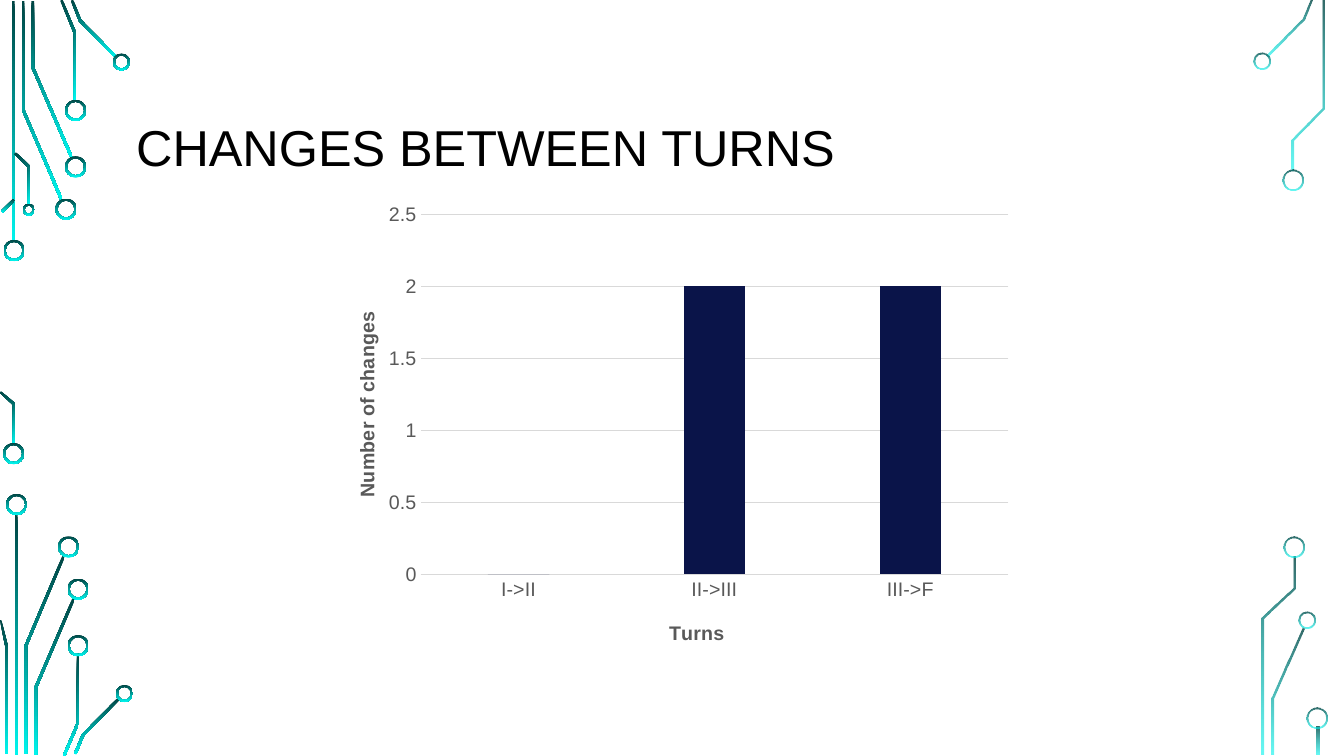
from math import hypot

from lxml import etree
from pptx import Presentation
from pptx.chart.data import CategoryChartData
from pptx.dml.color import RGBColor
from pptx.enum.chart import XL_CHART_TYPE, XL_TICK_MARK
from pptx.enum.shapes import MSO_SHAPE
from pptx.enum.text import MSO_ANCHOR, PP_ALIGN
from pptx.oxml.ns import qn
from pptx.util import Inches, Pt

COLUMN = XL_CHART_TYPE.COLUMN_CLUSTERED
NO_TICK = XL_TICK_MARK.NONE
RECT, DONUT = MSO_SHAPE.RECTANGLE, MSO_SHAPE.DONUT
MIDDLE, LEFT = MSO_ANCHOR.MIDDLE, PP_ALIGN.LEFT

COLS, ROWS = 1333, 750
CELL = Inches(0.01)
TRACE, RIM = 2.6, 2
BIG, MID, TINY = 21, 17, 12
DARK, CYAN = "004543", "00F5EE"
GREY, PALE, NAVY = "595959", "D9D9D9", "0A1449"

LEFT_SIDE = {
    "stems": [(12, 1, 239), (15, 510, 239)],
    "traces": [
        [(61, 198), (23, 109), (23, 1)],
        [(71, 156), (32.5, 67), (32.5, 1)],
        [(61, 0), (74.5, 33), (74.5, 100)],
        [(71.5, 0), (79.5, 20.5), (115.5, 57)],
        [(2, 210), (14, 198)],
        [(0, 389), (14, 401), (14, 441)],
        [(15, 152), (29, 165.5), (29, 203)],
        [(63.5, 551), (25.5, 641), (25.5, 748)],
        [(0, 615), (6.5, 641), (6.5, 748)],
        [(73.5, 593), (35.5, 682), (35.5, 749)],
        [(77.5, 650), (77.5, 717), (63.5, 750)],
        [(118, 693), (82.5, 729), (74.5, 748)],
    ],
    "rings": [
        (14, 248.5, BIG), (13.5, 450, BIG), (65.5, 207.5, BIG),
        (75, 165.5, BIG), (75, 109.5, BIG), (120.5, 61.5, MID),
        (28.5, 208, TINY), (16.5, 500.5, BIG), (68, 542.5, BIG),
        (77.5, 584.5, BIG), (77.5, 640.5, BIG), (123.5, 688, MID),
    ],
}
RIGHT_SIDE = {
    "stems": [(1306, 721, 28)],
    "traces": [
        [(1257, 55.5), (1292.5, 19.5), (1300.5, 0)],
        [(1293, 623), (1262.5, 693), (1262.5, 749)],
        [(1282, 169), (1282, 138.5), (1312.5, 107.5), (1312.5, 1)],
        [(1283.5, 552), (1283.5, 583.5), (1252.5, 613.5), (1252.5, 749)],
    ],
    "rings": [
        (1251.5, 60.5, MID), (1282.5, 178.5, BIG), (1296.5, 615.5, MID),
        (1283, 542.5, BIG), (1306.5, 712, BIG),
    ],
}


def grid(*cells):
    """Turn cell counts into whole lengths."""
    return [round(n * CELL) for n in cells]


def color(code):
    """Turn a hex string into a colour."""
    return RGBColor.from_string(code)


def style(font, size=14, bold=False, ink=GREY):
    """Format a font."""
    font.name, font.size, font.bold = "Arial", Pt(size), bold
    font.color.rgb = color(ink)


def put(frame, text, align=None, space=None, **look):
    """Write one formatted paragraph into a text frame."""
    para = frame.paragraphs[0]
    run = para.add_run()
    run.text = text
    style(run.font, **look)
    para.alignment, para.line_spacing = align, space


def paint(shape, alphas):
    """Fill a circuit part with the vertical gradient."""
    shape.shadow.inherit = False
    shape.line.fill.background()
    shape.fill.gradient()
    shape.fill.gradient_angle = 270
    stops = shape.fill.gradient_stops
    for stop, code, place in zip(stops, (DARK, CYAN), (0, 1)):
        stop.color.rgb, stop.position = color(code), place
    for node, alpha in zip(shape._element.spPr.iter(qn("a:srgbClr")), alphas):
        if alpha < 100:
            etree.SubElement(node, qn("a:alpha"), val=str(alpha * 1000))


def edges(points):
    """Return the outline of a band that follows the points."""
    norms = []
    for (x1, y1), (x2, y2) in zip(points, points[1:]):
        size = hypot(x2 - x1, y2 - y1)
        norms.append(((y1 - y2) / size, (x2 - x1) / size))
    near, far = [], []
    for (x, y), (a, b), (c, d) in zip(points, norms[:1] + norms, norms + norms[-1:]):
        reach = TRACE / 2 / (1 + a * c + b * d)
        dx, dy = (a + c) * reach, (b + d) * reach
        near.append((x + dx, y + dy))
        far.append((x - dx, y - dy))
    return [grid(max(x, 0), min(max(y, 0), ROWS)) for x, y in near + far[::-1]]


def circuit(slide, side, alphas):
    """Draw the stems, traces and rings of one side as a group."""
    shapes = slide.shapes.add_group_shape().shapes
    parts = [shapes.add_shape(RECT, *grid(x, y, TRACE, tall))
             for x, y, tall in side["stems"]]
    for points in side["traces"]:
        first, *rest = edges(points)
        path = shapes.build_freeform(*first)
        path.add_line_segments(rest)
        parts.append(path.convert_to_shape())
    for x, y, size in side["rings"]:
        ring = shapes.add_shape(
            DONUT, *grid(x - size / 2, y - size / 2, size, size))
        ring.adjustments[0] = RIM / size
        parts.append(ring)
    for part in parts:
        paint(part, alphas)


def place(node, **shares):
    """Set the manual layout of a chart part in shares of the chart."""
    layout = node.find(qn("c:layout"))
    if layout is None:
        layout = etree.Element(qn("c:layout"))
        node.insert(0, layout)
    manual = etree.SubElement(layout, qn("c:manualLayout"))
    if "w" in shares:
        etree.SubElement(manual, qn("c:layoutTarget"), val="inner")
    for key in "xy":
        etree.SubElement(manual, qn(f"c:{key}Mode"), val="edge")
    for key, share in shares.items():
        etree.SubElement(manual, qn(f"c:{key}"), val=str(share))


def label(axis, text, x, y):
    """Format an axis and give it a placed title."""
    axis.major_tick_mark = axis.minor_tick_mark = NO_TICK
    style(axis.tick_labels.font)
    put(axis.axis_title.text_frame, text, bold=True)
    place(axis.axis_title._element, x=x, y=y)


def rule(line):
    """Make a thin pale line."""
    line.color.rgb, line.width = color(PALE), Pt(0.75)


def graph(slide):
    """Add the column chart."""
    data = CategoryChartData()
    data.categories = ["I->II", "II->III", "III->F"]
    data.add_series("Series 1", [0, 2, 2])
    chart = slide.shapes.add_chart(COLUMN, *grid(320, 194, 694, 464), data).chart
    chart.has_legend = chart.has_title = False
    style(chart.font, size=10, ink="000000")
    plot = chart.plots[0]
    plot.gap_width, plot.overlap, plot.vary_by_categories = 219, -27, False
    bars = plot.series[0]
    bars.invert_if_negative = False
    bars.format.fill.solid()
    bars.format.fill.fore_color.rgb = color(NAVY)
    turns, count = chart.category_axis, chart.value_axis
    label(turns, "Turns", 0.49, 0.9)
    label(count, "Number of changes", 0.04, 0.24)
    next(count.axis_title._element.iter(qn("a:bodyPr"))).set("rot", "-5400000")
    rule(turns.format.line)
    rule(count.major_gridlines.format.line)
    count.format.line.fill.background()
    count.minimum_scale, count.maximum_scale, count.major_unit = 0, 2.5, 0.5
    place(chart._chartSpace.chart.plotArea, x=0.14, y=0.04, w=0.84, h=0.77)


def head(slide, text):
    """Fill and place the title."""
    title = slide.shapes.title
    title.left, title.top, title.width, title.height = grid(125, 68, 1083, 162)
    title.text_frame.vertical_anchor = MIDDLE
    put(title.text_frame, text, align=LEFT, space=0.9, size=36, ink="000000")


def main():
    """Build and save the slide."""
    deck = Presentation()
    deck.slide_width, deck.slide_height = grid(COLS, ROWS)
    slide = deck.slides.add_slide(deck.slide_layouts[5])
    circuit(slide, LEFT_SIDE, (100, 100))
    circuit(slide, RIGHT_SIDE, (80, 60))
    head(slide, "CHANGES BETWEEN TURNS")
    graph(slide)
    deck.save("out.pptx")


if __name__ == "__main__":
    main()
